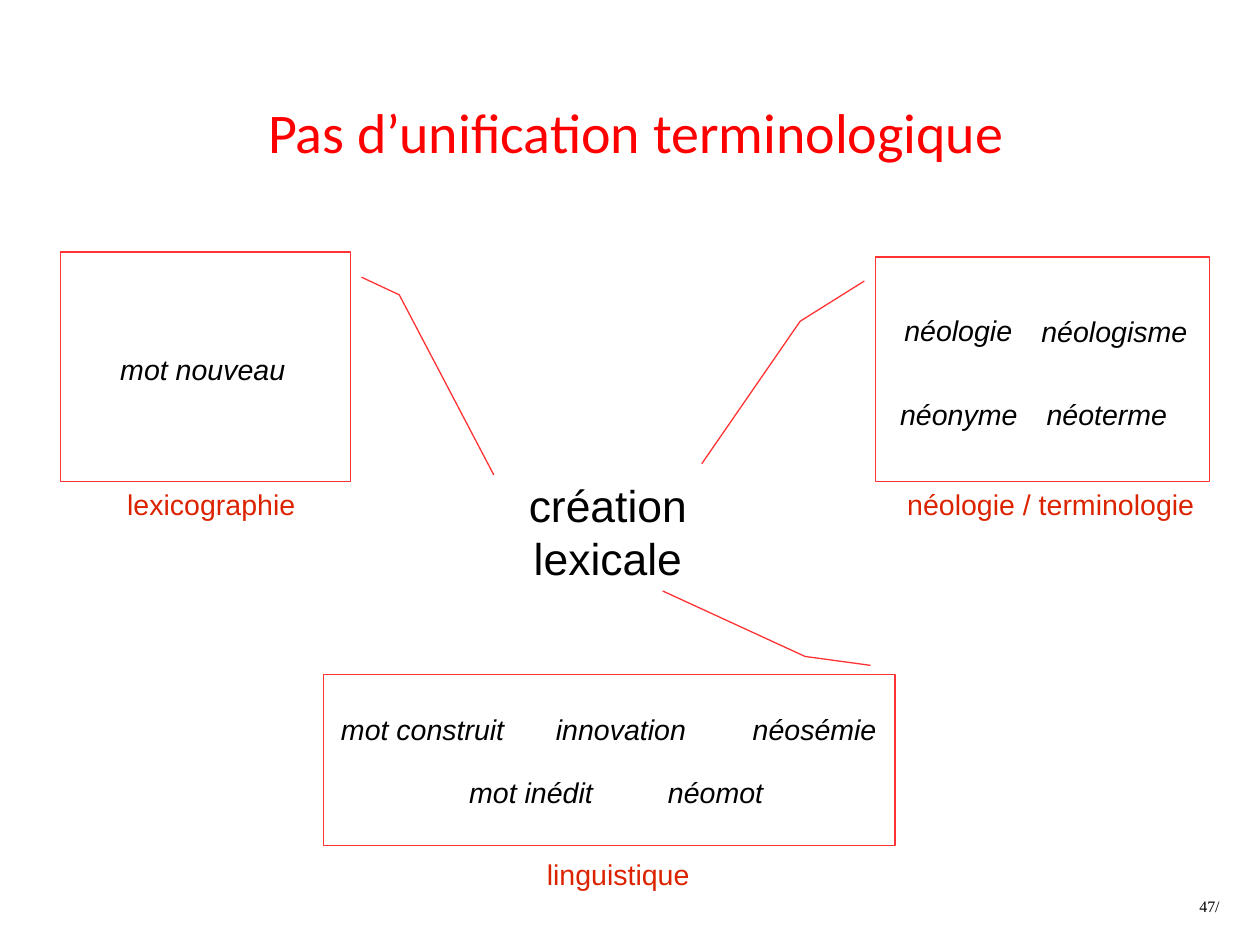
from pptx import Presentation
from pptx.dml.color import RGBColor
from pptx.enum.shapes import MSO_SHAPE as Preset
from pptx.enum.text import MSO_ANCHOR as Anchor, PP_ALIGN as Align
from pptx.util import Pt

BLACK, TITLE_RED, LABEL_RED, LINE_RED = "000000", "FF0000", "DC2300", "FF3333"
TERM_SIZE, TERM_HEIGHT = 16.3, 25.2


def colour(hex_code):
    """Turn a hex string into a colour."""
    return RGBColor.from_string(hex_code)


def place(shape, box):
    """Move and size a shape to a box given in points."""
    shape.left, shape.top, shape.width, shape.height = map(Pt, box)


def format_text(frame, size, hex_code, font_name="Arial", align=Align.LEFT, italic=False):
    """Format all paragraphs and runs of a text frame."""
    for paragraph in frame.paragraphs:
        paragraph.alignment = align
        for run in paragraph.runs:
            run.font.name, run.font.size = font_name, Pt(size)
            run.font.italic = italic
            run.font.color.rgb = colour(hex_code)


def add_text(slide, box, text, size, hex_code, insets=(6.5, 3), **style):
    """Add an unwrapped text box."""
    frame = slide.shapes.add_textbox(*map(Pt, box)).text_frame
    frame.word_wrap = False
    frame.margin_left = frame.margin_right = Pt(insets[0])
    frame.margin_top = frame.margin_bottom = Pt(insets[1])
    frame.text = text
    format_text(frame, size, hex_code, **style)


def add_title(slide, box, text):
    """Fill the title placeholder."""
    title = slide.shapes.title
    place(title, box)
    frame = title.text_frame
    frame.word_wrap = False
    frame.vertical_anchor = Anchor.MIDDLE
    frame.text = text
    format_text(frame, 32, TITLE_RED, "Calibri")


def add_field(slide, box, leader, domain, domain_spot, terms):
    """Add a field's callout, its domain label and its terms, all relative to the box."""
    left, top, width, height = box
    callout = slide.shapes.add_shape(Preset.LINE_CALLOUT_2, *map(Pt, box))
    callout.shadow.inherit = False
    callout.fill.background()
    callout.line.color.rgb = colour(LINE_RED)
    callout.line.width = Pt(0)
    for index, (x, y) in enumerate(leader):
        callout.adjustments[2 * index] = y / height
        callout.adjustments[2 * index + 1] = x / width

    x, y, label_width = domain_spot
    add_text(slide, (left + x, top + y, label_width, TERM_HEIGHT), domain, TERM_SIZE, LABEL_RED)
    for term, x, y, term_width in terms:
        add_text(slide, (left + x, top + y, term_width, TERM_HEIGHT), term, TERM_SIZE, BLACK,
                 align=Align.CENTER, italic=True)


def main():
    """Build the slide on terms for lexical creation."""
    deck = Presentation()
    deck.slide_width, deck.slide_height = Pt(720), Pt(540)
    slide = deck.slides.add_slide(deck.slide_layouts[5])

    add_title(slide, (146, 52, 440, 46), "Pas d’unification terminologique")
    add_text(slide, (295.2, 270, 104.4, 65.5), "création\nlexicale", 25.4, BLACK,
             align=Align.CENTER)
    add_field(slide, (34.6, 144, 165.6, 131),
              [(172, 14.4), (193.6, 24.5), (247.6, 127.4)],
              "lexicographie", (31.6, 131, 110),
              [("mot nouveau", 27.3, 54, 108)])
    add_field(slide, (500.4, 146.9, 190.8, 128.2),
              [(-6.5, 13.7), (-43.2, 36.7), (-99.4, 118.1)],
              "néologie / terminologie", (11.5, 128.2, 178.6),
              [("néologie", 9.4, 28.8, 75.6), ("néologisme", 87.8, 29.5, 97.2),
               ("néonyme", 7.2, 77, 80.6), ("néoterme", 90.7, 77, 82.8)])
    add_field(slide, (185, 385.5, 326.5, 97.5),
              [(312.5, -5.3), (275.1, -10.4), (193.7, -47.8)],
              "linguistique", (121, 101.2, 95.8),
              [("mot construit", 2.9, 18.4, 107.3), ("innovation", 126, 18.4, 87.8),
               ("néosémie", 238.4, 18.4, 84.2),
               ("mot inédit", 76.4, 54.4, 84.2), ("néomot", 190.1, 54.4, 67.7)])
    add_text(slide, (617.8, 512.6, 79.2, 23.8), "47/", 9.1, BLACK, insets=(0, 0),
             font_name="Times New Roman", align=Align.RIGHT)
    deck.save("out.pptx")


if __name__ == "__main__":
    main()
